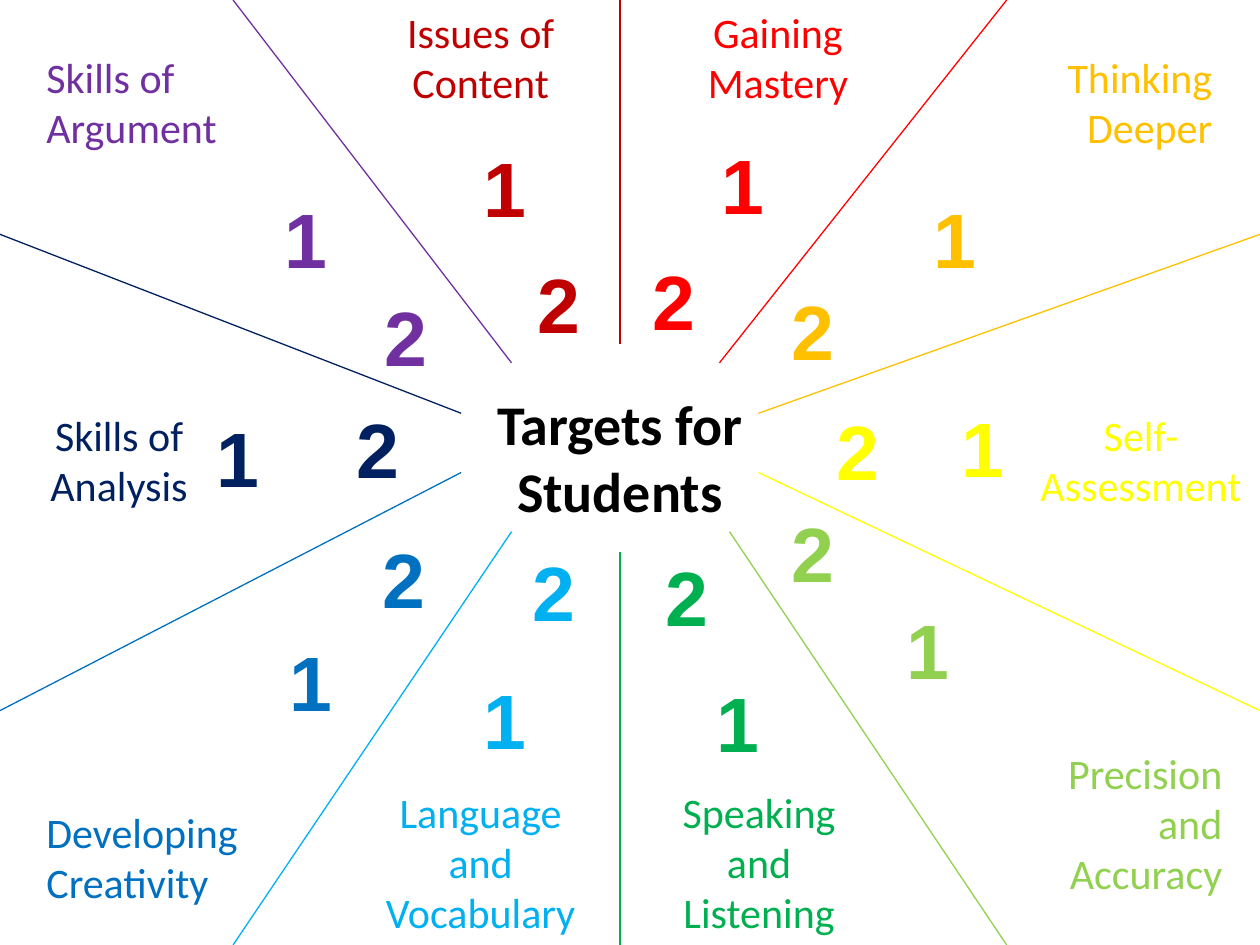
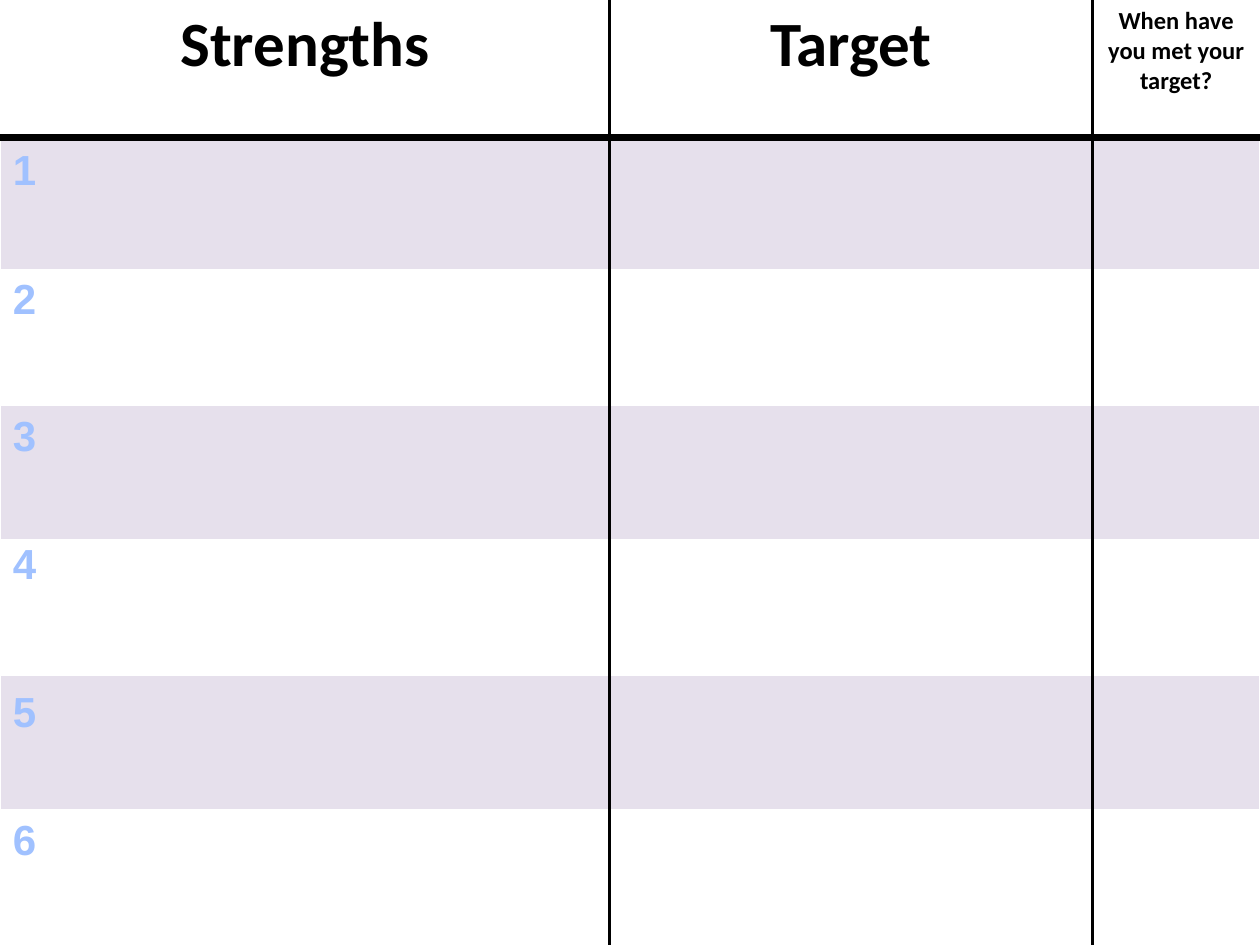
from dataclasses import dataclass

from lxml import etree
from pptx import Presentation
from pptx.dml.color import RGBColor
from pptx.enum.shapes import MSO_CONNECTOR
from pptx.enum.text import MSO_ANCHOR, MSO_AUTO_SIZE, PP_ALIGN
from pptx.oxml.ns import qn
from pptx.util import Pt

STRAIGHT = MSO_CONNECTOR.STRAIGHT
TOP = MSO_ANCHOR.TOP
FIT_SHAPE, NO_FIT = MSO_AUTO_SIZE.SHAPE_TO_FIT_TEXT, MSO_AUTO_SIZE.NONE
LEFT, CENTER, RIGHT = PP_ALIGN.LEFT, PP_ALIGN.CENTER, PP_ALIGN.RIGHT

PX = 9144  # one px is a hundredth of an inch
WIDTH, HEIGHT = 1000, 750
TITLE_ONLY, BLANK = 5, 6


@dataclass(frozen=True)
class Theme:
    text_font: str = "Calibri"
    number_font: str = "Arial"
    black: str = "000000"
    white: str = "FFFFFF"
    band: str = "E6E0EC"
    purple: str = "7030A0"
    crimson: str = "C00000"
    red: str = "FF0000"
    gold: str = "FFC000"
    yellow: str = "FFFF00"
    lime: str = "92D050"
    green: str = "00B050"
    sky: str = "00B0F0"
    blue: str = "0070C0"
    navy: str = "002060"
    number_outline: str = "467AB8"
    number_stops: tuple = ((0, "BFD3F9"), (9, "A0C1FF"), (50, "003D85"),
                           (79, "A0C1FF"), (100, "BFD3F9"))
    title_size: int = 32
    label_size: int = 24
    target_size: int = 44
    header_size: int = 36
    small_header_size: int = 14
    spoke_weight: float = 0.75
    divider_weight: float = 1.5
    header_rule_weight: float = 4
    number_outline_weight: float = 0.83


THEME = Theme()


@dataclass(frozen=True)
class Sector:
    label: str
    color: str
    box: tuple
    align: PP_ALIGN
    first: tuple   # left, top, width of the "1"
    second: tuple  # left, top, width of the "2"
    spoke: tuple   # inner x, y, outer x, y


SECTORS = [
    Sector("Skills of Argument", THEME.purple, (27, 36, 173, 91), LEFT,
           (216, 147, 71), (295, 225, 71), (406, 288, 185, 0)),
    Sector("Issues of Content", THEME.crimson, (295, 0, 173, 91), CENTER,
           (374, 107, 71), (417, 199, 71), (492, 273, 492, 0)),
    Sector("Gaining Mastery", THEME.red, (531, 0, 173, 91), CENTER,
           (563, 104, 24), (508, 196, 24), (571, 288, 799, 0)),
    Sector("Thinking Deeper", THEME.gold, (799, 36, 173, 91), RIGHT,
           (731, 147, 24), (618, 220, 31), (602, 328, WIDTH, 186)),
    Sector("Self-Assessment", THEME.yellow, (811, 320, 189, 91), CENTER,
           (753, 313, 31), (654, 315, 32), (602, 375, WIDTH, 564)),
    Sector("Precision and Accuracy", THEME.lime, (807, 588, 173, 131), RIGHT,
           (710, 473, 24), (618, 396, 31), (579, 422, 799, HEIGHT)),
    Sector("Speaking and Listening", THEME.green, (516, 619, 173, 131), CENTER,
           (559, 531, 24), (518, 431, 31), (492, 438, 492, HEIGHT)),
    Sector("Language and Vocabulary", THEME.sky, (295, 619, 173, 131), CENTER,
           (374, 529, 32), (413, 427, 32), (406, 422, 185, HEIGHT)),
    Sector("Developing Creativity", THEME.blue, (27, 635, 173, 91), LEFT,
           (220, 499, 31), (294, 417, 24), (366, 375, 0, 564)),
    Sector("Skills of\nAnalysis", THEME.navy, (0, 320, 189, 91), CENTER,
           (162, 321, 24), (273, 314, 24), (366, 328, 0, 186)),
]


def emu(*lengths):
    return [round(length * PX) for length in lengths]


def add_solid(parent, color):
    fill = etree.SubElement(parent, qn("a:solidFill"))
    etree.SubElement(fill, qn("a:srgbClr"), val=color)


def write_text(frame, text, *, size, color=None, font=THEME.text_font,
               bold=False, align=LEFT):
    """Fill a text frame, one paragraph a line, and return its runs."""
    runs = []
    for index, line in enumerate(text.split("\n")):
        paragraph = frame.add_paragraph() if index else frame.paragraphs[0]
        paragraph.alignment = align
        run = paragraph.add_run()
        run.text = line
        run.font.size, run.font.bold, run.font.name = Pt(size), bold, font
        if color:
            run.font.color.rgb = RGBColor.from_string(color)
        runs.append(run)
    return runs


class Deck:
    def __init__(self, theme):
        self.theme = theme
        self.presentation = Presentation()
        self.presentation.slide_width, self.presentation.slide_height = emu(WIDTH, HEIGHT)
        self.slide = None

    def new_slide(self, layout):
        layouts = self.presentation.slide_layouts
        self.slide = self.presentation.slides.add_slide(layouts[layout])

    def title(self, text, box):
        title = self.slide.shapes.title
        title.left, title.top, title.width, title.height = emu(*box)
        frame = title.text_frame
        frame.word_wrap, frame.auto_size = True, NO_FIT
        frame.vertical_anchor = TOP
        write_text(frame, text, size=self.theme.title_size,
                   color=self.theme.black, bold=True, align=CENTER)

    def text(self, text, box, wrap=True, **style):
        frame = self.slide.shapes.add_textbox(*emu(*box)).text_frame
        frame.word_wrap, frame.auto_size = wrap, FIT_SHAPE
        return write_text(frame, text, **style)

    def line(self, ends, color, weight):
        line = self.slide.shapes.add_connector(STRAIGHT, *emu(*ends))
        line.line.color.rgb = RGBColor.from_string(color)
        line.line.width = Pt(weight)
        etree.SubElement(line._element.spPr, qn("a:effectLst"))

    def target_number(self, text, place, color):
        left, top, width = place
        self.text(text, (left, top, width, 84), size=self.theme.target_size,
                  color=color, font=self.theme.number_font, bold=True)

    def row_number(self, text, top):
        """Row number with a gradient fill and a thin outline."""
        theme = self.theme
        run, = self.text(text, (0, top, 39, 50), wrap=False, align=CENTER, bold=True,
                         size=theme.label_size, font=theme.number_font)
        properties = run._r.get_or_add_rPr()
        outline = etree.Element(qn("a:ln"), w=str(Pt(theme.number_outline_weight)))
        add_solid(outline, theme.number_outline)
        gradient = etree.Element(qn("a:gradFill"))
        stops = etree.SubElement(gradient, qn("a:gsLst"))
        for percent, color in theme.number_stops:
            stop = etree.SubElement(stops, qn("a:gs"), pos=str(percent * 1000))
            etree.SubElement(stop, qn("a:srgbClr"), val=color)
        etree.SubElement(gradient, qn("a:lin"), ang=str(90 * 60000), scaled="0")
        properties.insert(0, outline)
        properties.insert(1, gradient)

    def style_cell(self, cell, fill, top=1, bottom=1):
        cell.fill.solid()
        cell.fill.fore_color.rgb = RGBColor.from_string(fill)
        properties = cell._tc.get_or_add_tcPr()
        sides = (("L", 1), ("R", 1), ("T", top), ("B", bottom))
        for index, (side, weight) in enumerate(sides):
            border = etree.Element(qn(f"a:ln{side}"), w=str(Pt(weight)))
            add_solid(border, self.theme.white)
            properties.insert(index, border)

    def banded_table(self, headers, widths, row_count):
        """Full-slide table: a header row over empty banded rows."""
        theme = self.theme
        table = self.slide.shapes.add_table(
            row_count, len(widths), *emu(0, 0, WIDTH, HEIGHT)).table
        table.first_row = table.horz_banding = False
        for column, width in zip(table.columns, emu(*widths)):
            column.width = width
        for index, row in enumerate(table.rows):
            row.height, = emu(HEIGHT / row_count)
            for cell in row.cells:
                self.style_cell(cell, theme.band if index % 2 else theme.white,
                                top=3 if index == 1 else 1,
                                bottom=3 if index == 0 else 1)
        for cell, (header, size) in zip(table.rows[0].cells, headers):
            write_text(cell.text_frame, header, size=size, color=theme.black,
                       bold=True, align=CENTER)


def build_targets_wheel(deck):
    deck.new_slide(TITLE_ONLY)
    deck.title("Targets for Students", (382, 304, 220, 118))
    for sector in SECTORS:
        deck.line(sector.spoke, sector.color, deck.theme.spoke_weight)
        deck.text(sector.label, sector.box, size=deck.theme.label_size,
                  color=sector.color, align=sector.align)
        deck.target_number("1", sector.first, sector.color)
        deck.target_number("2", sector.second, sector.color)


def build_strengths_table(deck):
    theme = deck.theme
    deck.new_slide(BLANK)
    headers = [("Strengths", theme.header_size), ("Target", theme.header_size),
               ("When have you met your target?", theme.small_header_size)]
    widths = [484, 383, 133]
    deck.banded_table(headers, widths, row_count=7)

    # Rules under the header and between the columns
    deck.line((0, 109, WIDTH, 109), theme.black, theme.header_rule_weight)
    for divider in (widths[0], widths[0] + widths[1]):
        deck.line((divider, 0, divider, HEIGHT), theme.black, theme.divider_weight)

    # Row numbers
    for number, top in enumerate((109, 211, 320, 422, 539, 641), start=1):
        deck.row_number(str(number), top)


def main():
    deck = Deck(THEME)
    build_targets_wheel(deck)
    build_strengths_table(deck)
    deck.presentation.save("out.pptx")


if __name__ == "__main__":
    main()
